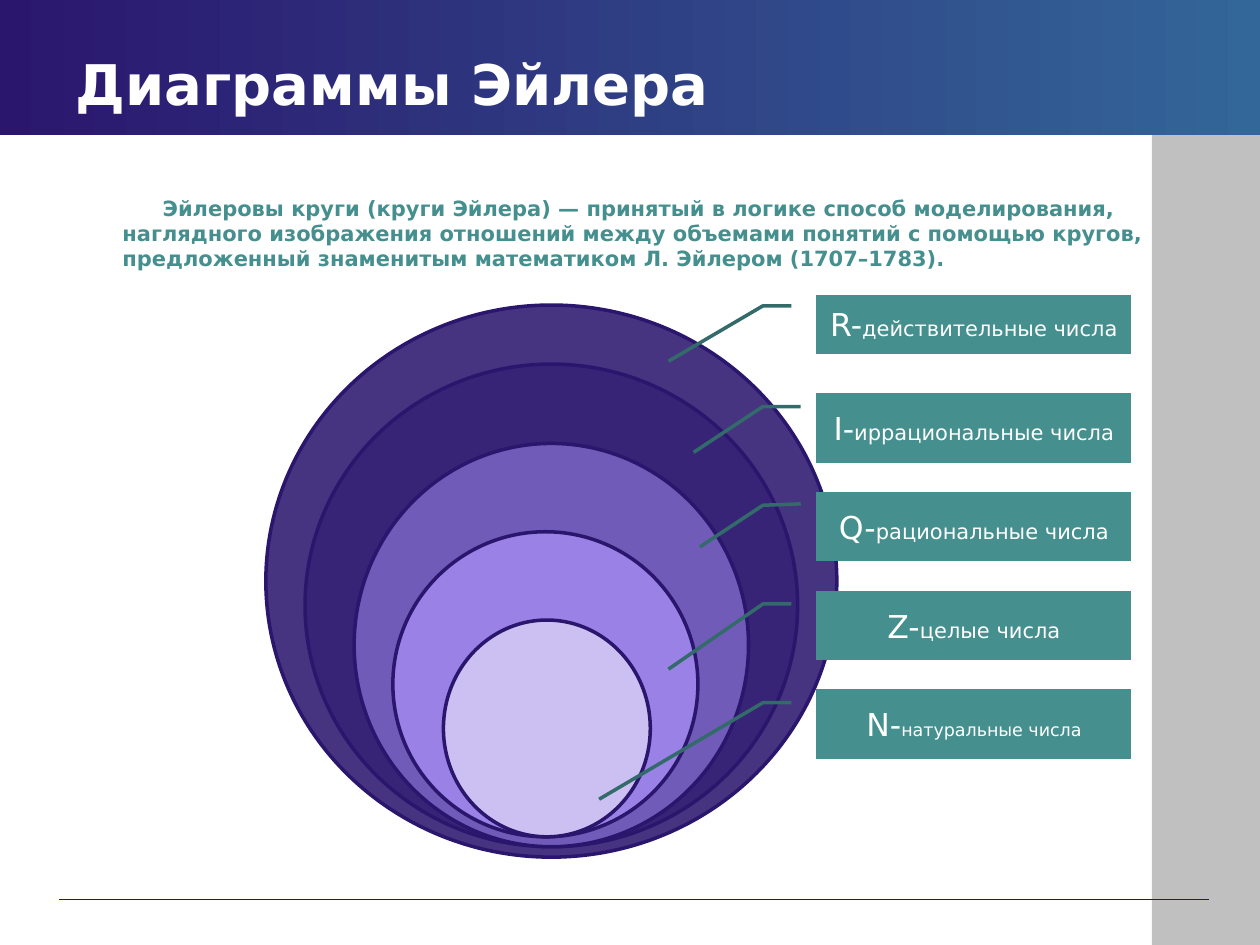
"""Build the slide on Euler diagrams with nested number sets."""
from dataclasses import dataclass

from lxml.etree import SubElement
from pptx import Presentation
from pptx.dml.color import RGBColor
from pptx.enum.shapes import MSO_CONNECTOR as Link, MSO_SHAPE as Form
from pptx.enum.text import MSO_ANCHOR as Anchor, MSO_AUTO_SIZE as Fit, PP_ALIGN as Align
from pptx.oxml.ns import qn
from pptx.util import Cm, Pt


@dataclass(frozen=True)
class Theme:
    font: str = "DejaVu Sans"
    navy: str = "2B166E"
    blue: str = "336699"
    grey: str = "C0C0C0"
    white: str = "FFFFFF"
    teal: str = "458F8F"
    dark_teal: str = "336A6A"
    violet: str = "9981E6"
    lilac: str = "CCC0F2"
    title: int = 32
    letter: int = 18
    text: int = 12
    small: int = 10


theme = Theme()


def add_form(form, place, fill, line=None, alpha=100):
    shape = page.shapes.add_shape(form, *map(Cm, place))
    shape.shadow.inherit = False
    shape.fill.solid()
    shape.fill.fore_color.rgb = RGBColor.from_string(fill)
    if alpha < 100:
        color = shape.fill._xPr.find(qn("a:solidFill"))[0]
        SubElement(color, qn("a:alpha"), val=str(alpha * 1000))
    if line:
        shape.line.color.rgb = RGBColor.from_string(line)
        shape.line.width = Pt(2)
    else:
        shape.line.fill.background()
    return shape


def add_span(para, text, size, color, bold=False):
    span = para.add_run()
    span.text = text
    for name, value in {"name": theme.font, "size": Pt(size), "bold": bold}.items():
        setattr(span.font, name, value)
    span.font.color.rgb = RGBColor.from_string(color)


deck = Presentation()
deck.slide_width, deck.slide_height = Cm(25.4), Cm(19.05)
page = deck.slides.add_slide(deck.slide_layouts[5])

add_form(Form.RECTANGLE, (23.22, 2.72, 2.18, 16.33), theme.grey)
rule = page.shapes.add_connector(Link.STRAIGHT, Cm(1.19), Cm(18.13), Cm(24.38), Cm(18.13))
rule.line.color.rgb = RGBColor.from_string(theme.navy)
rule.line.width = Pt(0.75)
SubElement(rule._element.spPr, qn("a:effectLst"))

band = add_form(Form.RECTANGLE, (0, 0, 25.4, 2.72), theme.navy)
band.fill.gradient()
band.fill.gradient_angle = 0
for stop, color in zip(band.fill.gradient_stops, (theme.navy, theme.blue)):
    stop.color.rgb = RGBColor.from_string(color)

title = page.shapes.title
page.shapes._spTree.append(title._element)
title_place = {"left": Cm(1.27), "top": Cm(0.89), "width": Cm(17.15), "height": Cm(1.57)}
for name, value in title_place.items():
    setattr(title, name, value)
title_format = {"vertical_anchor": Anchor.MIDDLE, "word_wrap": True, "auto_size": Fit.NONE}
for name, value in title_format.items():
    setattr(title.text_frame, name, value)
para = title.text_frame.paragraphs[0]
para.alignment = Align.LEFT
add_span(para, "Диаграммы Эйлера", theme.title, theme.white, True)

box = page.shapes.add_textbox(Cm(1.27), Cm(3.81), Cm(22.86), Cm(13.77))
box.text_frame.word_wrap = True
para = box.text_frame.paragraphs[0]
para.space_before = Pt(2.4)
for name, value in {"marL": Cm(0.95), "indent": Cm(0.81)}.items():
    para._p.get_or_add_pPr().set(name, str(value))
add_span(
    para,
    "Эйлеровы круги (круги Эйлера) — принятый в логике способ моделирования, "
    "наглядного изображения отношений между объемами понятий с помощью кругов, "
    "предложенный знаменитым математиком Л. Эйлером (1707–1783).",
    theme.text, theme.teal, True,
)

ellipses = [
    ((5.36, 6.15, 11.51, 11.13), theme.navy, 87),
    ((6.15, 7.34, 9.93, 9.73), theme.navy, 52),
    ((7.14, 8.94, 7.95, 8.13), theme.violet, 60),
    ((7.92, 10.72, 6.15, 6.15), theme.violet, 100),
    ((8.94, 12.5, 4.17, 4.37), theme.lilac, 100),
]
for place, fill, alpha in ellipses:
    add_form(Form.OVAL, place, fill, theme.navy, alpha)

callouts = [
    ("R-", "действительные числа", theme.text, 1.19, (0.19, -0.08, 1.13, -0.47)),
    ("I-", "иррациональные числа", theme.text, 1.4, (0.19, -0.05, 0.85, -0.39)),
    ("Q-", "рациональные числа", theme.text, 1.4, (0.17, -0.05, 0.79, -0.37)),
    ("Z-", "целые числа", theme.text, 1.4, (0.19, -0.08, 1.13, -0.47)),
    ("N-", "натуральные числа", theme.small, 1.4, (0.19, -0.08, 1.58, -0.69)),
]
for row, (letter, label, size, height, leader) in enumerate(callouts):
    place = (16.46, 5.94 + 1.99 * row, 6.35, height)
    callout = add_form(Form.LINE_CALLOUT_2_NO_BORDER, place, theme.teal, theme.dark_teal)
    start_y, start_x, end_y, end_x = leader
    for index, value in enumerate((start_y, start_x, 0.19, -0.17, end_y, end_x)):
        callout.adjustments[index] = value
    callout.text_frame.vertical_anchor = Anchor.MIDDLE
    callout.text_frame.word_wrap = True
    para = callout.text_frame.paragraphs[0]
    para.alignment = Align.CENTER
    add_span(para, letter, theme.letter, theme.white)
    add_span(para, label, size, theme.white)

deck.save("out.pptx")
